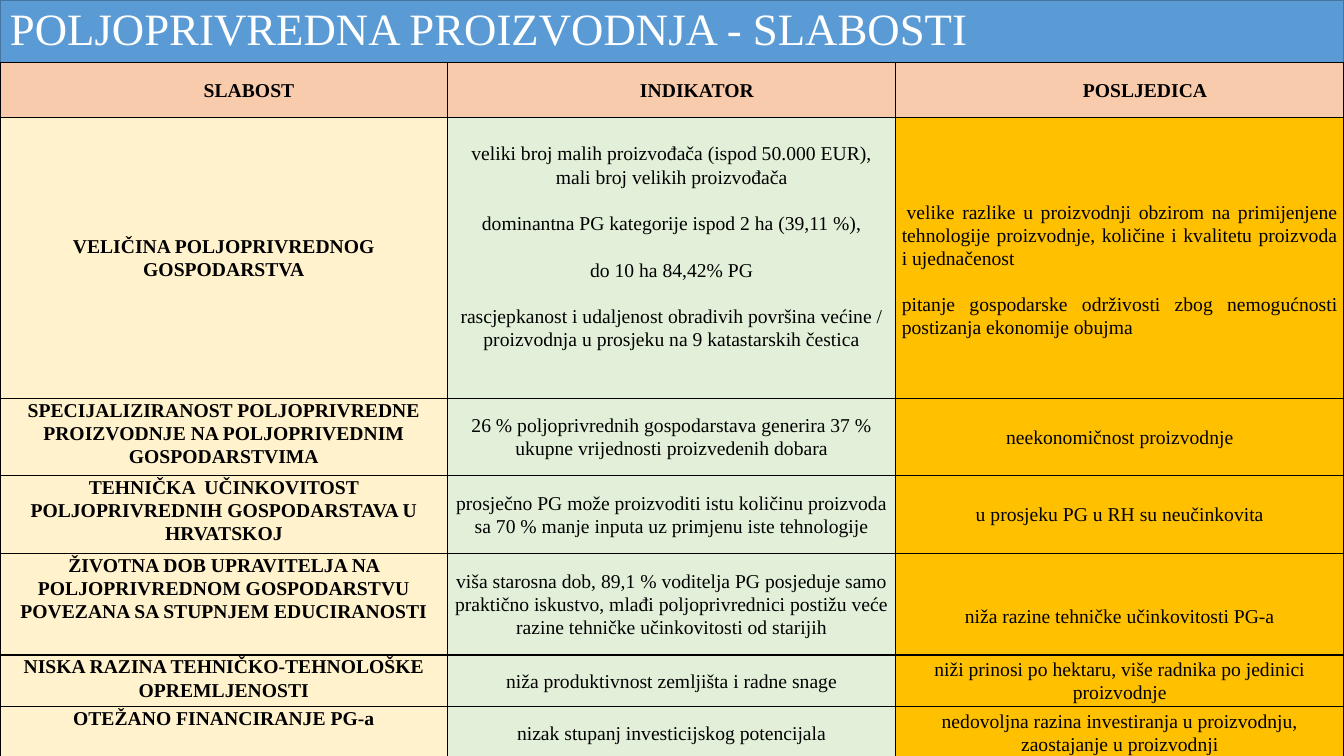
"""Build a slide with a table of weaknesses in farm production."""
import pptx
import pptx.util
import pptx.dml.color
import pptx.enum.shapes
import pptx.enum.text
import pptx.oxml

Pt = pptx.util.Pt
ALIGN = pptx.enum.text.PP_ALIGN
MID = pptx.enum.text.MSO_ANCHOR.MIDDLE
TOP = pptx.enum.text.MSO_ANCHOR.TOP
HUES = {"bar": "5B9BD5", "edge": "43739E", "head": "F8CBAD", "weak": "FFF2CC",
        "sign": "E2F0D9", "end": "FFC000", "ink": "000000", "white": "FFFFFF"}
WIDE, HIGH, BAR, LINE = 960, 540, 44.6, 16.6
COLS = (319.8, 320.1, 320.1)
HEIGHTS = (39.6, 200.2, 55.4, 55.4, 72.7, 36.7, 38)
HEAD = ("SLABOST", "INDIKATOR", "POSLJEDICA")
ROWS = (
    ("VELIČINA POLJOPRIVREDNOG GOSPODARSTVA",
     "veliki broj malih proizvođača (ispod 50.000 EUR), mali broj velikih proizvođača\n"
     "dominantna PG kategorije ispod 2 ha (39,11 %),\n"
     "do 10 ha 84,42% PG\n"
     "rascjepkanost i udaljenost obradivih površina većine / "
     "proizvodnja u prosjeku na 9 katastarskih čestica",
     "velike razlike u proizvodnji obzirom na primijenjene tehnologije proizvodnje, "
     "količine i kvalitetu proizvoda i ujednačenost\n"
     "pitanje gospodarske održivosti zbog nemogućnosti postizanja ekonomije obujma"),
    ("SPECIJALIZIRANOST POLJOPRIVREDNE PROIZVODNJE NA POLJOPRIVEDNIM GOSPODARSTVIMA",
     "26 % poljoprivrednih gospodarstava generira 37 % ukupne vrijednosti proizvedenih dobara",
     "neekonomičnost proizvodnje"),
    ("TEHNIČKA  UČINKOVITOST POLJOPRIVREDNIH GOSPODARSTAVA U HRVATSKOJ",
     "prosječno PG može proizvoditi istu količinu proizvoda "
     "sa 70 % manje inputa uz primjenu iste tehnologije",
     "u prosjeku PG u RH su neučinkovita"),
    ("ŽIVOTNA DOB UPRAVITELJA NA POLJOPRIVREDNOM GOSPODARSTVU "
     "POVEZANA SA STUPNJEM EDUCIRANOSTI",
     "viša starosna dob, 89,1 % voditelja PG posjeduje samo praktično iskustvo, "
     "mlađi poljoprivrednici postižu veće razine tehničke učinkovitosti od starijih",
     "niža razine tehničke učinkovitosti PG-a"),
    ("NISKA RAZINA TEHNIČKO-TEHNOLOŠKE OPREMLJENOSTI",
     "niža produktivnost zemljišta i radne snage",
     "niži prinosi po hektaru, više radnika po jedinici proizvodnje"),
    ("OTEŽANO FINANCIRANJE PG-a",
     "nizak stupanj investicijskog potencijala",
     "nedovoljna razina investiranja u proizvodnju, zaostajanje u proizvodnji"),
)


def tint(name):
    """Return the named colour."""
    return pptx.dml.color.RGBColor.from_string(HUES[name])


def write(frame, text, font="Times New Roman", size=14, hue="ink", bold=False,
          align=ALIGN.CENTER, lead=1.07, left=0, first=0):
    """Write one paragraph per line of text, a blank line's height apart."""
    frame.word_wrap = True
    for num, part in enumerate(text.split("\n")):
        para = frame.add_paragraph() if num else frame.paragraphs[0]
        para.alignment = align
        para.line_spacing = lead
        para.space_before = Pt(LINE if num else 0)
        props = para._p.get_or_add_pPr()
        props.set("marL", str(Pt(left)))
        props.set("indent", str(Pt(0 if num else first)))
        run = para.add_run()
        run.text = part
        run.font.name = font
        run.font.size = Pt(size)
        run.font.bold = bold
        run.font.color.rgb = tint(hue)


class Board:
    """Hold the slide and its style."""

    def __init__(self, slide):
        """Keep the slide to draw on."""
        self.slide = slide

    def title(self, text):
        """Draw the title bar."""
        bar = self.slide.shapes.add_shape(
            pptx.enum.shapes.MSO_SHAPE.RECTANGLE, 0, 0, Pt(WIDE), Pt(BAR))
        bar.shadow.inherit = False
        bar.fill.solid()
        bar.fill.fore_color.rgb = tint("bar")
        bar.line.color.rgb = tint("edge")
        bar.line.width = Pt(1)
        bar.text_frame.vertical_anchor = MID
        write(bar.text_frame, text, size=32, hue="white", align=ALIGN.LEFT, lead=0.9)

    def table(self):
        """Add an empty table with the sizes set."""
        frame = self.slide.shapes.add_table(
            len(HEIGHTS), len(COLS), 0, Pt(BAR), Pt(WIDE), Pt(sum(HEIGHTS)))
        grid = frame.table
        for col, width in zip(grid.columns, COLS):
            col.width = Pt(width)
        for row, height in zip(grid.rows, HEIGHTS):
            row.height = Pt(height)
        return grid

    def cell(self, cell, text, fill, anchor=MID, above=0, below=0, **form):
        """Fill, frame and write one cell."""
        cell.margin_left = cell.margin_right = Pt(4.3)
        cell.margin_top, cell.margin_bottom = Pt(above), Pt(below)
        cell.vertical_anchor = anchor
        props = cell._tc.get_or_add_tcPr()
        for side in ("lnL", "lnR", "lnT", "lnB"):
            props.append(pptx.oxml.parse_xml(
                f'<a:{side} xmlns:a="http://schemas.openxmlformats.org/drawingml/2006/main" '
                f'w="{Pt(1)}"><a:solidFill><a:srgbClr val="{HUES["ink"]}"/>'
                f'</a:solidFill></a:{side}>'))
        cell.fill.solid()
        cell.fill.fore_color.rgb = tint(fill)
        write(cell.text_frame, text, **form)


def main():
    """Build and save the slide."""
    deck = pptx.Presentation()
    deck.slide_width, deck.slide_height = Pt(WIDE), Pt(HIGH)
    board = Board(deck.slides.add_slide(deck.slide_layouts[6]))
    board.title("POLJOPRIVREDNA PROIZVODNJA - SLABOSTI")
    grid = board.table()
    for col, text in enumerate(HEAD):
        board.cell(grid.cell(0, col), text, "head", bold=True, left=36)
    forms = {
        (1, 0): {"anchor": MID},
        (1, 1): {"below": LINE},
        (1, 2): {"above": LINE, "align": ALIGN.JUSTIFY, "first": 3.5},
        (4, 2): {"above": LINE},
    }
    for row, texts in enumerate(ROWS, 1):
        for col, (text, fill) in enumerate(zip(texts, ("weak", "sign", "end"))):
            form = {"bold": col == 0, "anchor": MID if col else TOP}
            form.update(forms.get((row, col), {}))
            board.cell(grid.cell(row, col), text, fill, **form)
    deck.save("out.pptx")


if __name__ == "__main__":
    main()
